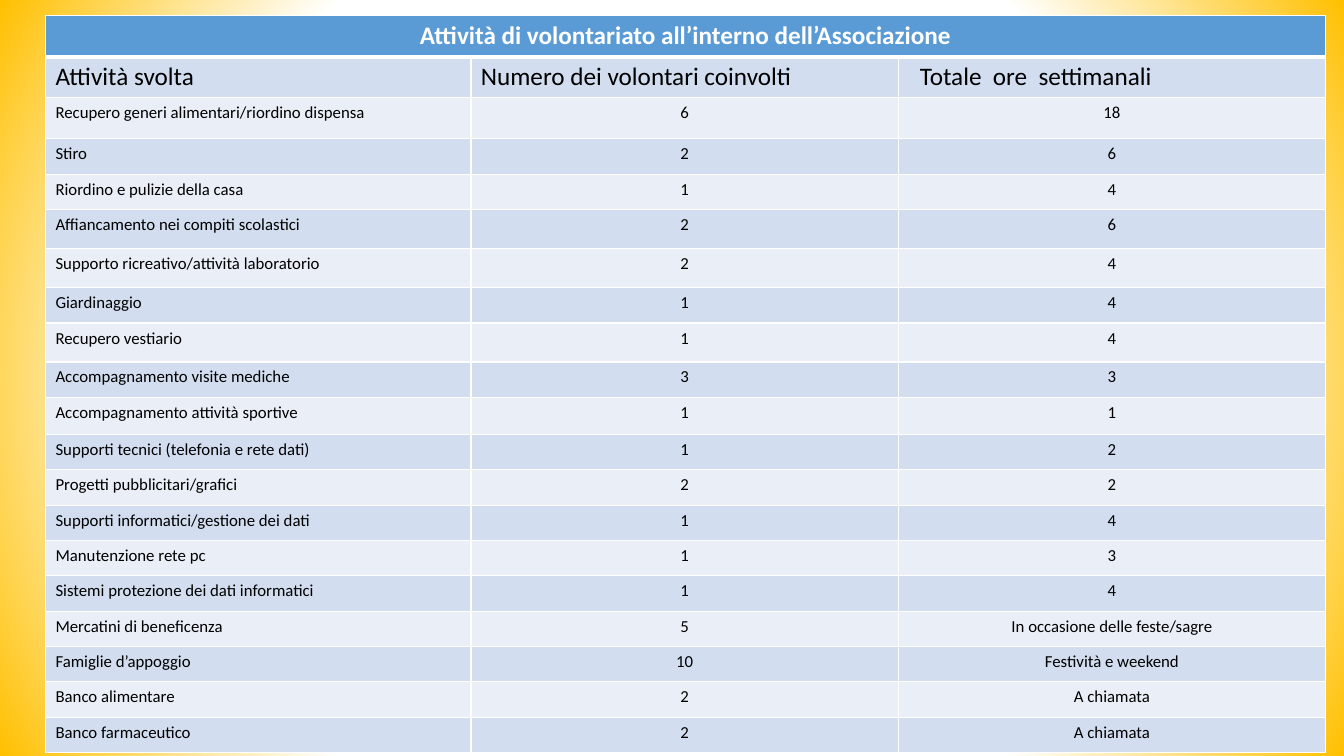
from dataclasses import dataclass

from pptx import Presentation
from pptx.dml.color import RGBColor
from pptx.enum.text import PP_ALIGN as Align
from pptx.oxml import parse_xml
from pptx.oxml.ns import nsdecls
from pptx.table import _Cell as Cell
from pptx.util import Cm, Pt

WHITE, BLACK, YELLOW = "FFFFFF", "000000", "FFC000"
HEAD, BANDS = "5B9BD5", ("D2DEEF", "EAEFF7")
COL_WIDTHS = (10.72, 10.77, 10.77)
TITLE_HEIGHT = 1.03
TITLE = "Attività di volontariato all’interno dell’Associazione"


@dataclass(frozen=True)
class Activity:
    name: str
    volunteers: str
    hours: str
    height: float = 0.89
    size: int = 12
    align: Align = Align.CENTER
    hours_margin: float = 0.25


ROWS = (
    Activity("Attività svolta", "Numero dei volontari coinvolti",
             "Totale  ore  settimanali", 1.03, 18, Align.LEFT, 0.54),
    Activity("Recupero generi alimentari/riordino dispensa", "6", "18", 1.04),
    Activity("Stiro", "2", "6"),
    Activity("Riordino e pulizie della casa", "1", "4"),
    Activity("Affiancamento nei compiti scolastici", "2", "6", 0.98),
    Activity("Supporto ricreativo/attività laboratorio", "2", "4", 0.99),
    Activity("Giardinaggio", "1", "4"),
    Activity("Recupero vestiario", "1", "4", 0.98),
    Activity("Accompagnamento visite mediche", "3", "3"),
    Activity("Accompagnamento attività sportive", "1", "1", 0.94),
    Activity("Supporti tecnici (telefonia e rete dati)", "1", "2"),
    Activity("Progetti pubblicitari/grafici", "2", "2"),
    Activity("Supporti informatici/gestione dei dati", "1", "4"),
    Activity("Manutenzione rete pc", "1", "3"),
    Activity("Sistemi protezione dei dati informatici", "1", "4"),
    Activity("Mercatini di beneficenza", "5", "In occasione delle feste/sagre"),
    Activity("Famiglie d’appoggio", "10", "Festività e weekend"),
    Activity("Banco alimentare", "2", "A chiamata"),
    Activity("Banco farmaceutico", "2", "A chiamata"),
)


def color(value: str) -> RGBColor:
    return RGBColor.from_string(value)


def set_background(s) -> None:
    fill = s.background.fill
    fill.solid()
    fill.fore_color.rgb = color(WHITE)
    stops = "".join(
        f'<a:gs pos="{pos * 1000}"><a:srgbClr val="{tone}"/></a:gs>'
        for pos, tone in ((0, WHITE), (65, WHITE), (100, YELLOW)))
    solid = s.element.xpath("p:cSld/p:bg/p:bgPr/a:solidFill")[0]
    solid.getparent().replace(solid, parse_xml(
        f'<a:gradFill {nsdecls("a")} rotWithShape="1"><a:gsLst>{stops}</a:gsLst>'
        '<a:path path="circle"><a:fillToRect l="50000" t="50000" r="50000" b="50000"/>'
        '</a:path></a:gradFill>'))


def set_borders(cell: Cell, top: float = 1, bottom: float = 1) -> None:
    tc_pr = cell._tc.get_or_add_tcPr()
    for i, (side, width) in enumerate((("L", 1), ("R", 1), ("T", top), ("B", bottom))):
        tc_pr.insert(i, parse_xml(
            f'<a:ln{side} {nsdecls("a")} w="{Pt(width)}"><a:solidFill>'
            f'<a:srgbClr val="{WHITE}"/></a:solidFill></a:ln{side}>'))


def write_cell(cell: Cell, text: str, *, fill: str, size: int, align: Align,
               ink: str = BLACK, bold: bool = False, margin: float = 0.25) -> None:
    cell.fill.solid()
    cell.fill.fore_color.rgb = color(fill)
    cell.margin_left = Cm(margin)
    p = cell.text_frame.paragraphs[0]
    p.alignment = align
    r = p.add_run()
    r.text = text
    r.font.name, r.font.size, r.font.bold = "Calibri", Pt(size), bold
    r.font.color.rgb = color(ink)


def add_activity_table(s) -> None:
    heights = [TITLE_HEIGHT] + [row.height for row in ROWS]
    table = s.shapes.add_table(len(heights), len(COL_WIDTHS), Cm(1.15), Cm(0.4),
                               Cm(sum(COL_WIDTHS)), Cm(sum(heights))).table
    for col, width in zip(table.columns, COL_WIDTHS):
        col.width = Cm(width)
    for line, height in zip(table.rows, heights):
        line.height = Cm(height)
    title = table.cell(0, 0)
    title.merge(table.cell(0, len(COL_WIDTHS) - 1))
    write_cell(title, TITLE, fill=HEAD, size=18, align=Align.CENTER, ink=WHITE, bold=True)
    for cell in table.rows[0].cells:
        set_borders(cell, bottom=3)
    for i, row in enumerate(ROWS):
        fill = BANDS[i % 2]
        columns = ((row.name, Align.LEFT, 0.25), (row.volunteers, row.align, 0.25),
                   (row.hours, row.align, row.hours_margin))
        for j, (text, align, margin) in enumerate(columns):
            cell = table.cell(i + 1, j)
            write_cell(cell, text, fill=fill, size=row.size, align=align, margin=margin)
            set_borders(cell, top=3 if i == 0 else 1)


def main() -> None:
    prs = Presentation()
    prs.slide_width, prs.slide_height = Cm(33.87), Cm(19.05)
    s = prs.slides.add_slide(prs.slide_layouts[6])
    set_background(s)
    add_activity_table(s)
    prs.save("out.pptx")


if __name__ == "__main__":
    main()
